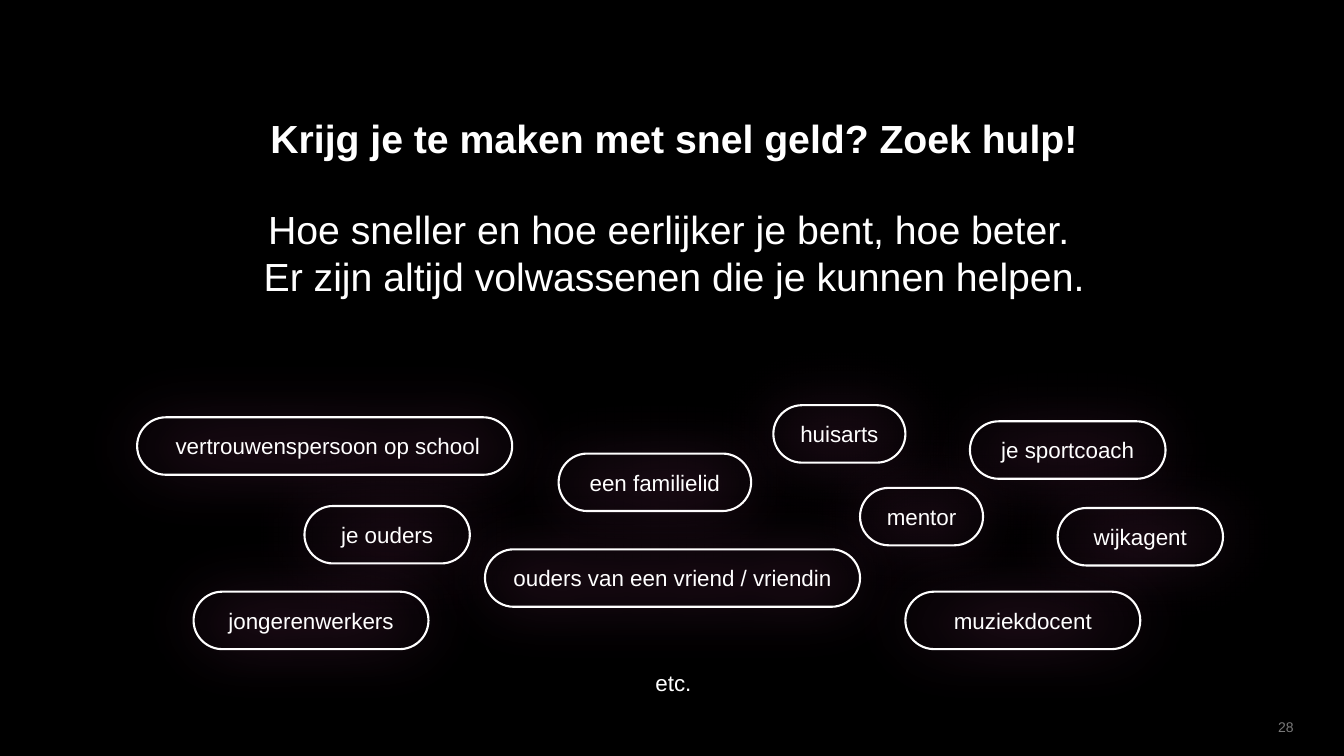
from lxml import etree
from pptx import Presentation
from pptx.dml.color import RGBColor
from pptx.enum.shapes import MSO_SHAPE
from pptx.enum.text import MSO_ANCHOR, PP_ALIGN
from pptx.oxml.ns import qn
from pptx.util import Inches, Pt

PILL = MSO_SHAPE.ROUNDED_RECTANGLE
TOP, MIDDLE = MSO_ANCHOR.TOP, MSO_ANCHOR.MIDDLE
CENTER, RIGHT = PP_ALIGN.CENTER, PP_ALIGN.RIGHT

COLORS = {"background": "000000", "text": "FFFFFF", "number": "797979", "glow": "C8539F"}
PILL_HEIGHT = 0.57
GLOW_BLUR = Pt(42.4)


def write_text(shape, lines, size, color="text", align=CENTER, anchor=TOP):
    """Fill a shape with (text, bold, space before) lines."""
    frame = shape.text_frame
    frame.word_wrap = True
    frame.vertical_anchor = anchor
    for index, (text, bold, space_before) in enumerate(lines):
        paragraph = frame.add_paragraph() if index else frame.paragraphs[0]
        paragraph.alignment = align
        if space_before:
            paragraph.space_before = Pt(space_before)
        run = paragraph.add_run()
        run.text = text
        font_format = {"name": "Arial", "size": Pt(size), "bold": bold}
        for attribute, value in font_format.items():
            setattr(run.font, attribute, value)
        run.font.color.rgb = RGBColor.from_string(COLORS[color])


def add_glow(shape):
    """Give a shape a soft coloured shadow without offset."""
    shape.shadow.inherit = False
    effects = shape._element.spPr.find(qn("a:effectLst"))
    shadow = etree.SubElement(effects, qn("a:outerShdw"), blurRad=str(int(GLOW_BLUR)),
                              dist="0", dir="0", algn="ctr", rotWithShape="0")
    etree.SubElement(shadow, qn("a:srgbClr"), val=COLORS["glow"])


# Slide
presentation = Presentation()
presentation.slide_width = Inches(13.33)
presentation.slide_height = Inches(7.5)
slide = presentation.slides.add_slide(presentation.slide_layouts[6])
slide.background.fill.solid()
slide.background.fill.fore_color.rgb = RGBColor.from_string(COLORS["background"])

# Slide number
number = slide.shapes.add_textbox(Inches(9.93), Inches(7.01), Inches(3), Inches(0.4))
write_text(number, [("28", False, 0)], 10, "number", RIGHT, MIDDLE)

# Message
message = slide.shapes.add_textbox(Inches(1.52), Inches(1.08), Inches(10.33), Inches(2.15))
write_text(message, [
    ("Krijg je te maken met snel geld? Zoek hulp!", True, 0),
    ("Hoe sneller en hoe eerlijker je bent, hoe beter. ", False, 32),
    ("Er zijn altijd volwassenen die je kunnen helpen.", False, 0),
], 28)

# People who can help: text, left, top, width
helpers = [
    (" vertrouwenspersoon op school", 1.36, 4.14, 3.72),
    ("mentor", 8.53, 4.84, 1.22),
    ("een familielid", 5.54, 4.5, 1.91),
    ("je ouders", 3.02, 5.02, 1.64),
    ("ouders van een vriend / vriendin", 4.81, 5.45, 3.72),
    ("huisarts", 7.67, 4.02, 1.31),
    ("jongerenwerkers", 1.92, 5.87, 2.33),
    ("muziekdocent", 8.98, 5.87, 2.33),
    ("je sportcoach", 9.62, 4.18, 1.94),
    ("wijkagent", 10.49, 5.04, 1.64),
]
for text, left, top, width in helpers:
    pill = slide.shapes.add_shape(PILL, Inches(left), Inches(top), Inches(width), Inches(PILL_HEIGHT))
    pill.adjustments[0] = 0.5
    pill.fill.background()
    pill.line.color.rgb = RGBColor.from_string(COLORS["text"])
    pill.line.width = Pt(1.5)
    add_glow(pill)
    write_text(pill, [(text, False, 0)], 16, anchor=MIDDLE)

# Closing word
closing = slide.shapes.add_textbox(Inches(5.86), Inches(6.59), Inches(1.64), Inches(PILL_HEIGHT))
write_text(closing, [("etc.", False, 0)], 16)

presentation.save("out.pptx")
